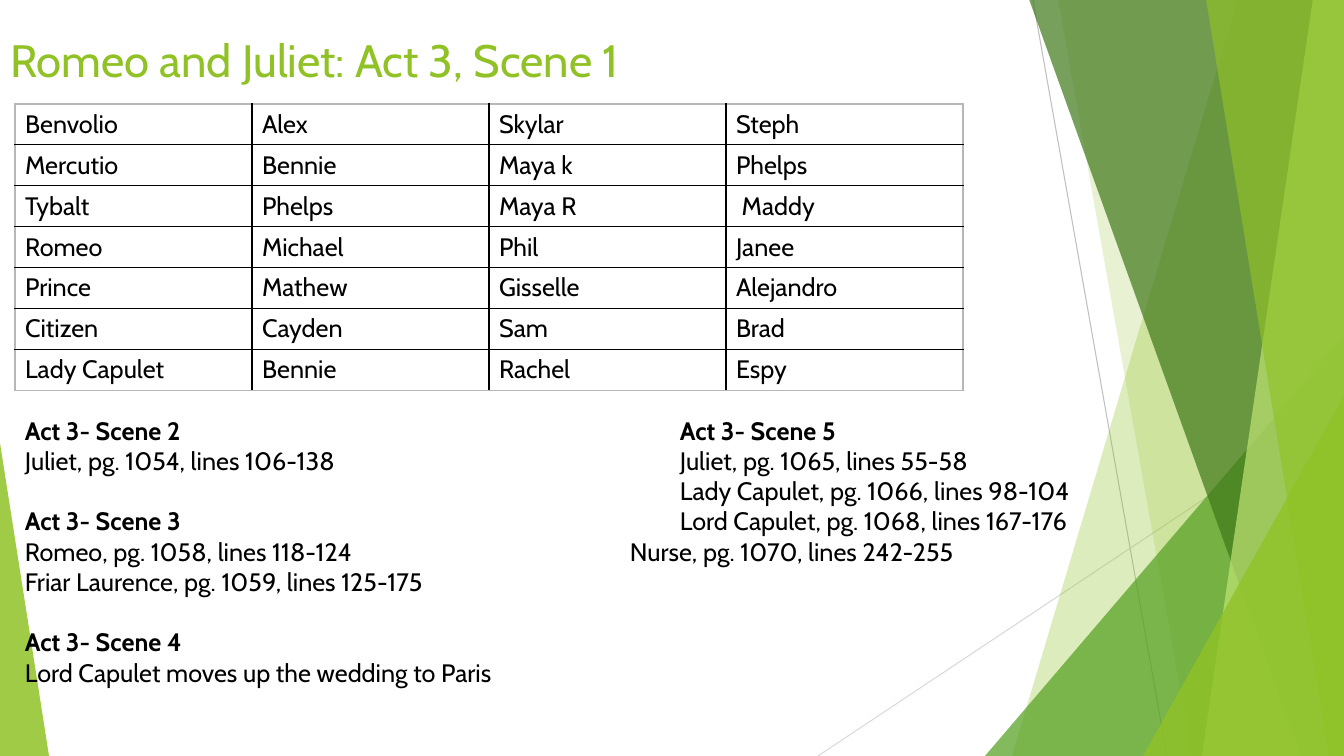
from lxml.etree import SubElement
from pptx import Presentation
from pptx.dml.color import RGBColor
from pptx.enum.shapes import MSO_CONNECTOR, MSO_SHAPE
from pptx.enum.text import MSO_ANCHOR, MSO_AUTO_SIZE, PP_ALIGN
from pptx.oxml.ns import qn
from pptx.util import Pt

PX = 914400 / 100.8
FONT = "Cabin"
COLORS = {
    "lime": "90C226",
    "green": "54A021",
    "forest": "3F7819",
    "pale": "C0E474",
    "text": "000000",
    "grid": "000000",
    "frame": "B7B7B7",
    "ray": "BFBFBF",
    "faint_ray": "D9D9D9",
}


def px(*lengths):
    return [round(length * PX) for length in lengths]


def style_run(run, size, color, bold=False):
    run.font.name = FONT
    run.font.size = Pt(size)
    run.font.bold = bold
    run.font.color.rgb = RGBColor.from_string(COLORS[color])


prs = Presentation()
prs.slide_width, prs.slide_height = px(1344, 756)
slide = prs.slides.add_slide(prs.slide_layouts[5])
shapes = slide.shapes

rays = [
    (1033, 0, 1167, 756, "ray"),
    (1344, 406, 818, 756, "faint_ray"),
]
for *ends, color in rays:
    ray = shapes.add_connector(MSO_CONNECTOR.STRAIGHT, *px(*ends))
    ray.line.color.rgb = RGBColor.from_string(COLORS[color])
    ray.line.width = Pt(0.75)
    SubElement(ray._element.spPr, qn("a:effectLst"))

facets = [
    ("band", (1238, 1012), "lime", 30),
    ("band", (1058, 1192), "lime", 20),
    ("triangle", (985, 336, 359, 420, 1), "green", 72),
    ("band", (1029, 1301), "forest", 70),
    ("band", (1313, 1202), "pale", 70),
    ("band", (1206, 1329), "lime", 65),
    ("triangle", (1143, 396, 201, 360, 1), "lime", 80),
    ("triangle", (0, 443, 49, 313, 0), "lime", 85),
]
for kind, geometry, color, opacity in facets:
    if kind == "band":
        top_x, bottom_x = geometry
        outline = shapes.build_freeform(top_x, -1, scale=PX)
        outline.add_line_segments([(1344, -1), (1344, 756), (bottom_x, 756)], close=True)
        facet = outline.convert_to_shape()
    else:
        *box, apex = geometry
        facet = shapes.add_shape(MSO_SHAPE.ISOSCELES_TRIANGLE, *px(*box))
        facet.adjustments[0] = apex
    facet.shadow.inherit = False
    facet.line.fill.background()
    facet.fill.solid()
    facet.fill.fore_color.rgb = RGBColor.from_string(COLORS[color])
    tint = facet._element.spPr.find(qn("a:solidFill"))[0]
    SubElement(tint, qn("a:alpha"), val=str(opacity * 1000))

title = shapes.title
title.left, title.top, title.width, title.height = px(0, 28, 948, 62)
title.text_frame.text = "Romeo and Juliet: Act 3, Scene 1"
title.text_frame.auto_size = MSO_AUTO_SIZE.NONE
title.text_frame.vertical_anchor = MSO_ANCHOR.MIDDLE
title.text_frame.paragraphs[0].alignment = PP_ALIGN.LEFT
style_run(title.text_frame.paragraphs[0].runs[0], 32.4, "lime")

cast = [
    ("Benvolio", "Alex", "Skylar", "Steph"),
    ("Mercutio", "Bennie", "Maya k", "Phelps"),
    ("Tybalt", "Phelps", "Maya R", " Maddy"),
    ("Romeo", "Michael", "Phil", "Janee"),
    ("Prince", "Mathew", "Gisselle", "Alejandro"),
    ("Citizen", "Cayden", "Sam", "Brad"),
    ("Lady Capulet", "Bennie", "Rachel", "Espy"),
]
last_row, last_col = len(cast) - 1, len(cast[0]) - 1
cast_table = shapes.add_table(len(cast), len(cast[0]), *px(15, 104, 948, 286)).table
cast_table.first_row = False
cast_table.horz_banding = False
for r, names in enumerate(cast):
    for c, name in enumerate(names):
        cell = cast_table.cell(r, c)
        cell.text = name
        cell.vertical_anchor = MSO_ANCHOR.MIDDLE
        style_run(cell.text_frame.paragraphs[0].runs[0], 18, "text")
        cell_props = cell._tc.get_or_add_tcPr()
        sides = {"lnL": c == 0, "lnR": c == last_col, "lnT": r == 0, "lnB": r == last_row}
        for side, is_outer in sides.items():
            border = SubElement(cell_props, qn(f"a:{side}"), w=str(Pt(1)))
            border_fill = SubElement(border, qn("a:solidFill"))
            border_color = COLORS["frame" if is_outer else "grid"]
            SubElement(border_fill, qn("a:srgbClr"), val=border_color)
        cell.fill.background()

RIGHT_COLUMN, NURSE_COLUMN = 655, 605
readings = [
    ("Act 3- Scene 2", "Act 3- Scene 5", RIGHT_COLUMN),
    ("Juliet, pg. 1054, lines 106-138", "Juliet, pg. 1065, lines 55-58", RIGHT_COLUMN),
    ("", "Lady Capulet, pg. 1066, lines 98-104", RIGHT_COLUMN),
    ("Act 3- Scene 3", "Lord Capulet, pg. 1068, lines 167-176", RIGHT_COLUMN),
    ("Romeo, pg. 1058, lines 118-124", "Nurse, pg. 1070, lines 242-255", NURSE_COLUMN),
    ("Friar Laurence, pg. 1059, lines 125-175", "", None),
    ("Act 3- Scene 4", "", None),
    ("Lord Capulet moves up the wedding to Paris", "", None),
]
reading_list = shapes.add_textbox(*px(15, 410, 1107, 346)).text_frame
reading_list.word_wrap = True
for i, (left, right, column) in enumerate(readings):
    line = reading_list.paragraphs[0] if i == 0 else reading_list.add_paragraph()
    if left == "Act 3- Scene 4":
        line.space_before = Pt(21.6)
    if right:
        stops = SubElement(line._p.get_or_add_pPr(), qn("a:tabLst"))
        SubElement(stops, qn("a:tab"), pos=str(px(column)[0]), algn="l")
    for part in (left, "\t" + right if right else ""):
        if part:
            run = line.add_run()
            run.text = part
            style_run(run, 18, "text", part.strip().startswith("Act"))

prs.save("out.pptx")
